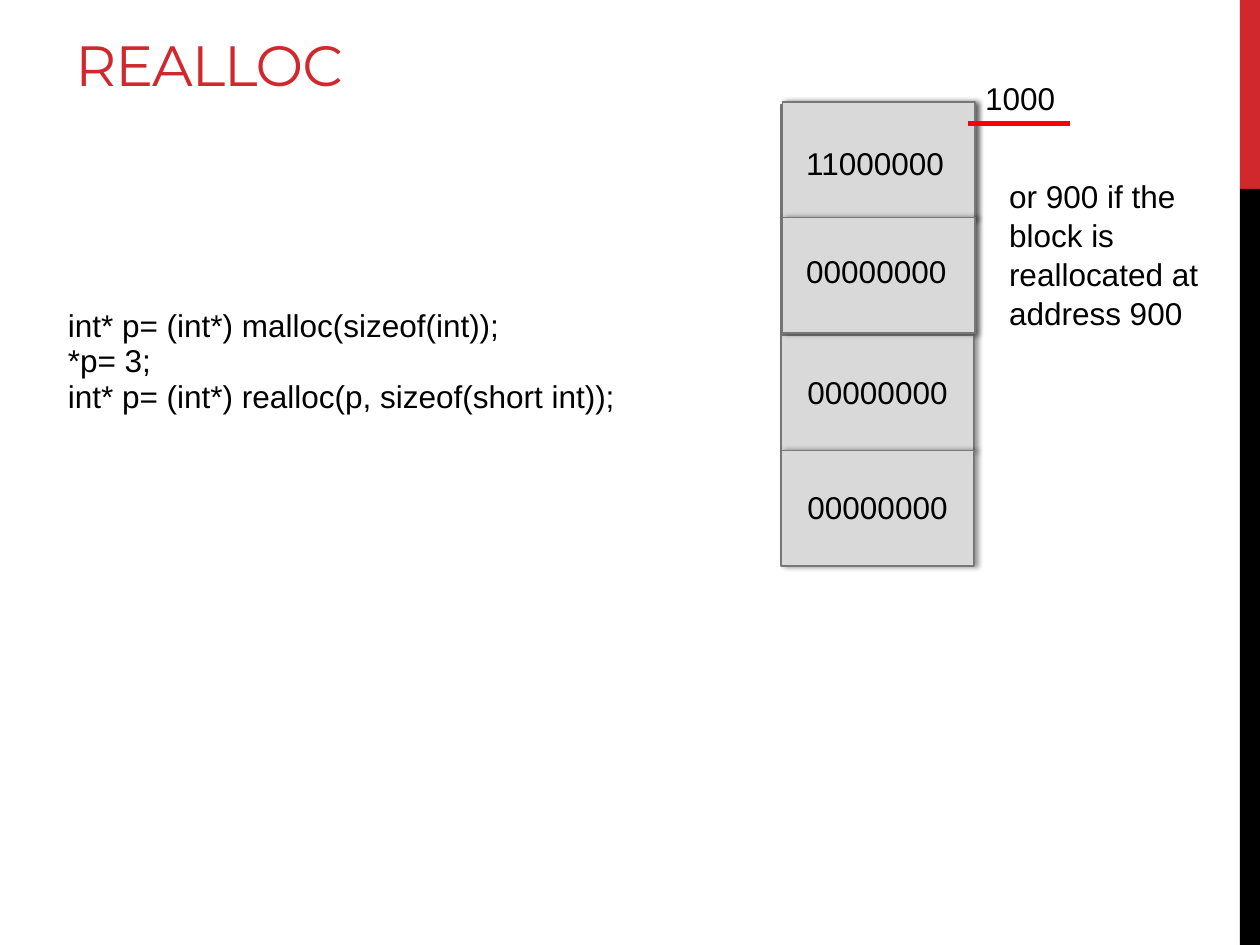
from lxml.etree import SubElement as Sub
from pptx import Presentation
from pptx.dml.color import RGBColor
from pptx.enum.shapes import MSO_CONNECTOR as Link, MSO_SHAPE as Form
from pptx.enum.text import MSO_ANCHOR as Anchor
from pptx.oxml.ns import qn
from pptx.util import Inches, Pt

RED = RGBColor(0xD1, 0x28, 0x2E)
MARK = RGBColor(0xFF, 0, 0)
BLACK = RGBColor(0, 0, 0)
GREY = RGBColor(0xD9, 0xD9, 0xD9)
EDGE = RGBColor(0x77, 0x77, 0x77)

BODY = {"name": "Arial", "size": Pt(18)}
HEAD = {"name": "Montserrat", "size": Pt(32.4)}
CELL_W, CELL_H, STEP = 1.53, 0.92, 0.915


def add_text(slide, box, lines, style=BODY, color=BLACK, wrap=False, space=None):
    """Place lines of text in a box and return its frame."""
    frame = slide.shapes.add_textbox(*map(Inches, box)).text_frame
    frame.word_wrap = wrap
    for i, line in enumerate(lines):
        para = frame.paragraphs[0] if i == 0 else frame.add_paragraph()
        para.line_spacing = space
        run = para.add_run()
        run.text = line
        for key, value in style.items():
            setattr(run.font, key, value)
        run.font.color.rgb = color
    return frame


def add_rect(slide, box, fill):
    """Place a plain filled rectangle without a line."""
    rect = slide.shapes.add_shape(Form.RECTANGLE, *map(Inches, box))
    rect.shadow.inherit = False
    rect.fill.solid()
    rect.fill.fore_color.rgb = fill
    rect.line.fill.background()
    return rect


def add_shade(shape):
    """Give a shape a soft shadow on its right."""
    effects = shape._element.spPr.find(qn("a:effectLst"))
    shade = Sub(effects, qn("a:outerShdw"), blurRad=str(Pt(3.1)),
                dist=str(Pt(1.8)), dir="0", rotWithShape="0")
    color = Sub(shade, qn("a:srgbClr"), val=str(BLACK))
    Sub(color, qn("a:alpha"), val="40000")


def add_side(slide, left, top, width, height):
    """Draw the two-coloured band at the slide's edge."""
    cut = height / 5
    add_rect(slide, (left, top, width, cut), RED)
    add_rect(slide, (left, top + cut, width, height - cut), BLACK)


def add_title(slide, box, text):
    """Write the slide title on the bottom of its box."""
    frame = add_text(slide, box, [text], HEAD, RED, True)
    frame.vertical_anchor = Anchor.BOTTOM
    frame.paragraphs[0].runs[0].font._element.set("spc", "-60")


def add_code(slide, left, top, lines):
    """Write each code line in its own box at an equal step."""
    for i, (line, width) in enumerate(lines):
        add_text(slide, (left, top + i * 0.28, width, 0.4), [line])


def add_stack(slide, left, top, count, labels):
    """Draw a column of memory cells, then the labels keyed by cell."""
    for i in range(count):
        cell = add_rect(slide, (left, top + i * STEP, CELL_W, CELL_H), GREY)
        cell.line.color.rgb = EDGE
        cell.line.width = Pt(1)
        add_shade(cell)
    for i, (text, inset, drop) in labels.items():
        add_text(slide, (left + inset, top + i * STEP + drop, 1.32, 0.4), [text])


def add_mark(slide, left, top, width):
    """Draw the red address line."""
    ends = map(Inches, (left, top, left + width, top))
    line = slide.shapes.add_connector(Link.STRAIGHT, *ends)
    line.line.color.rgb = MARK
    line.line.width = Pt(3.25)
    Sub(line._element.spPr, qn("a:effectLst"))


def main():
    """Build the slide and save it."""
    deck = Presentation()
    deck.slide_width, deck.slide_height = Inches(10), Inches(7.5)
    slide = deck.slides.add_slide(deck.slide_layouts[6])
    add_side(slide, 9.84, 0, 0.16, 7.5)
    add_title(slide, (0.5, 0.17, 9.02, 0.66), "REALLOC")
    add_stack(slide, 6.2, 0.83, 4, {2: ("00000000", 0.11, 0.25),
                                    3: ("00000000", 0.11, 0.25)})
    add_code(slide, 0.44, 2.38, [
        ("int* p= (int*) malloc(sizeof(int));", 3.66),
        ("*p= 3;", 0.87),
        ("int* p= (int*) realloc(p, sizeof(short int));", 4.58)])
    add_text(slide, (7.72, 0.58, 0.76, 0.4), ["1000"])
    add_stack(slide, 6.21, 0.81, 2, {0: ("11000000", 0.09, 0.28),
                                     1: ("00000000", 0.09, 0.23)})
    add_mark(slide, 7.68, 0.98, 0.81)
    add_text(slide, (7.91, 1.34, 1.79, 1.31),
             ["or 900 if the", "block is", "reallocated at", "address 900"],
             space=1.04)
    deck.save("out.pptx")


if __name__ == "__main__":
    main()
